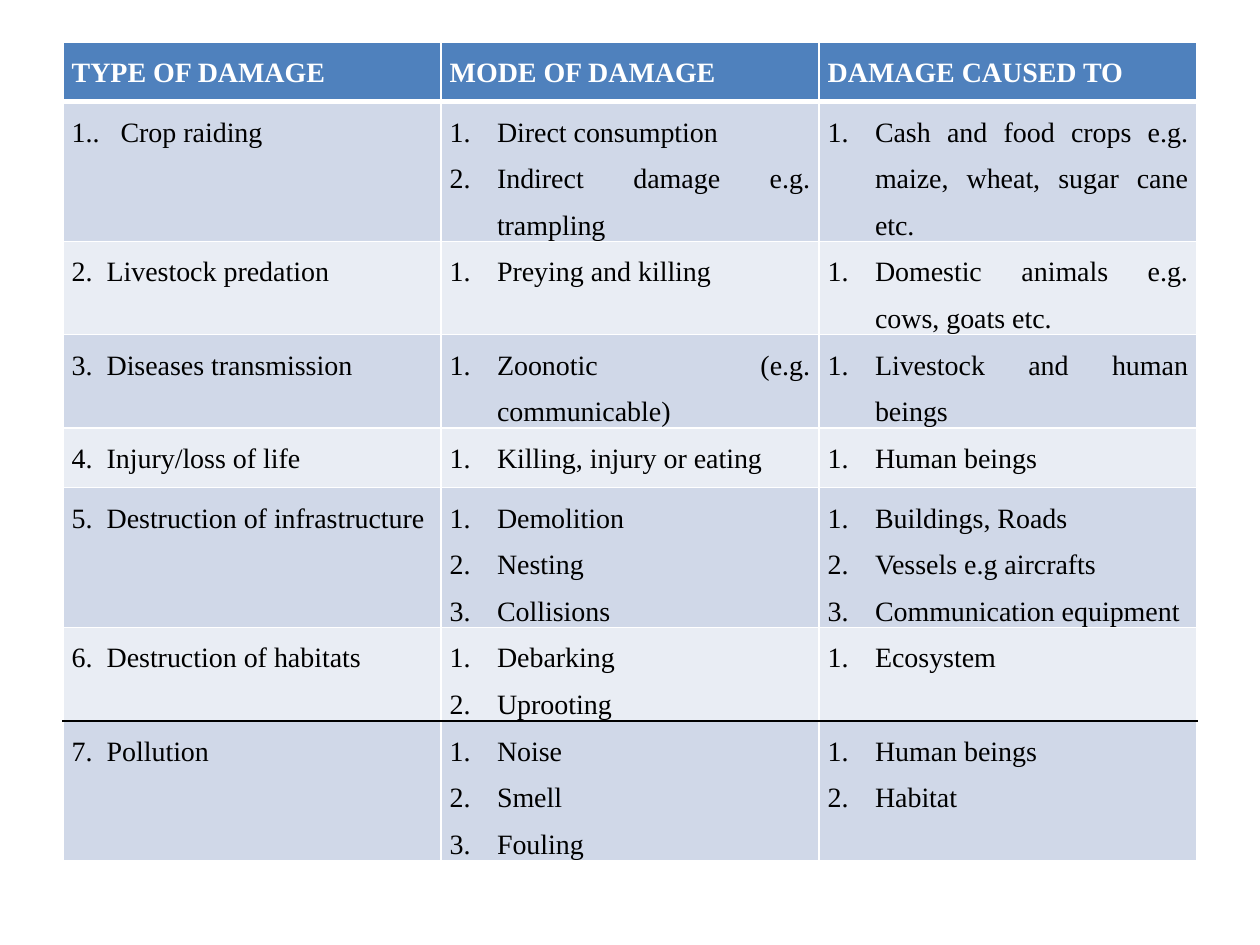
import dataclasses

import lxml.etree
import pptx
import pptx.dml.color
import pptx.enum.text
import pptx.oxml.ns
import pptx.util

Pt = pptx.util.Pt
qn = pptx.oxml.ns.qn
RGBColor = pptx.dml.color.RGBColor


@dataclasses.dataclass(frozen=True)
class Theme:
    font: str = "Times New Roman"
    size: int = 16
    header_fill: str = "4F81BD"
    band_fills: tuple = ("D0D8E8", "E9EDF4")
    white: str = "FFFFFF"
    black: str = "000000"
    line_spacing: float = 1.5
    indent: int = 27
    margin: float = 5


HEADERS = ("TYPE OF DAMAGE", "MODE OF DAMAGE", "DAMAGE CAUSED TO")
DAMAGES = (
    ("1..\u00a0\u00a0 Crop raiding".replace("\u00a0", " "),
     ("Direct consumption", "Indirect damage e.g. trampling"),
     ("Cash and food crops e.g. maize, wheat, sugar cane etc.",)),
    ("2.  Livestock predation",
     ("Preying and killing",),
     ("Domestic animals e.g. cows, goats etc.",)),
    ("3.  Diseases transmission",
     ("Zoonotic (e.g. communicable)",),
     ("Livestock and human beings",)),
    ("4.  Injury/loss of life",
     ("Killing, injury or eating",),
     ("Human beings",)),
    ("5.  Destruction of infrastructure",
     ("Demolition", "Nesting", "Collisions"),
     ("Buildings, Roads", "Vessels e.g aircrafts", "Communication equipment")),
    ("6.  Destruction of habitats",
     ("Debarking", "Uprooting"),
     ("Ecosystem",)),
    ("7.  Pollution",
     ("Noise", "Smell", "Fouling"),
     ("Human beings", "Habitat")),
)
COLUMN_WIDTH = 216
# Minimum heights: rows grow to hold their text.
ROW_HEIGHTS = (34, 50, 50, 34, 34, 74, 40, 0)


class SlideBuilder:
    def __init__(self, slide, theme):
        self.slide = slide
        self.theme = theme

    def add_damage_table(self, left, top, height):
        theme = self.theme
        shape = self.slide.shapes.add_table(
            len(ROW_HEIGHTS), len(HEADERS), Pt(left), Pt(top),
            Pt(COLUMN_WIDTH * len(HEADERS)), Pt(height))
        table = shape.table
        for column in table.columns:
            column.width = Pt(COLUMN_WIDTH)
        for row, row_height in zip(table.rows, ROW_HEIGHTS):
            row.height = Pt(row_height)
        shape.height = Pt(height)

        # One rule above each row, plus one below the last.
        rules = [(theme.white, 1)] * (len(ROW_HEIGHTS) + 1)
        rules[1] = (theme.white, 3)
        rules[-2] = (theme.black, 1)
        for row_index, contents in enumerate((HEADERS,) + DAMAGES):
            is_header = row_index == 0
            fill = theme.header_fill if is_header else theme.band_fills[(row_index - 1) % 2]
            for column_index, content in enumerate(contents):
                cell = table.cell(row_index, column_index)
                self.style_cell(cell, fill, rules[row_index], rules[row_index + 1])
                self.fill_text(cell.text_frame, content, is_header)
                if is_header and column_index > 0:
                    paragraph = cell.text_frame.paragraphs[0]
                    paragraph.space_before, paragraph.space_after = Pt(12), Pt(3)

    def style_cell(self, cell, fill, top_rule, bottom_rule):
        cell.margin_left = cell.margin_right = Pt(self.theme.margin)
        cell.margin_top = cell.margin_bottom = 0
        side_rule = (self.theme.white, 1)
        borders = {"a:lnL": side_rule, "a:lnR": side_rule,
                   "a:lnT": top_rule, "a:lnB": bottom_rule}
        properties = cell._tc.get_or_add_tcPr()
        for tag, (color, width) in borders.items():
            line = lxml.etree.SubElement(properties, qn(tag), w=str(Pt(width)))
            solid = lxml.etree.SubElement(line, qn("a:solidFill"))
            lxml.etree.SubElement(solid, qn("a:srgbClr"), val=color)
        cell.fill.solid()
        cell.fill.fore_color.rgb = RGBColor.from_string(fill)

    def fill_text(self, text_frame, content, is_header):
        """Write a string as plain text, or a tuple as a numbered list."""
        theme = self.theme
        numbered = isinstance(content, tuple)
        lines = content if numbered else (content,)
        text_frame.text = "\n".join(lines)
        for paragraph in text_frame.paragraphs:
            paragraph.alignment = pptx.enum.text.PP_ALIGN.JUSTIFY
            paragraph.line_spacing = theme.line_spacing
            if numbered:
                self.number(paragraph)
            font = paragraph.font
            font.name = theme.font
            font.size = Pt(theme.size)
            font.bold = is_header
            font.color.rgb = RGBColor.from_string(theme.white if is_header else theme.black)

    def number(self, paragraph):
        properties = paragraph._p.get_or_add_pPr()
        properties.set("marL", str(Pt(self.theme.indent)))
        properties.set("indent", str(-Pt(self.theme.indent)))
        lxml.etree.SubElement(properties, qn("a:buAutoNum"), type="arabicPeriod")


def main():
    presentation = pptx.Presentation()
    presentation.slide_width = Pt(720)
    presentation.slide_height = Pt(540)
    slide = presentation.slides.add_slide(presentation.slide_layouts[6])
    SlideBuilder(slide, Theme()).add_damage_table(left=36, top=24, height=499)
    presentation.save("out.pptx")


if __name__ == "__main__":
    main()
